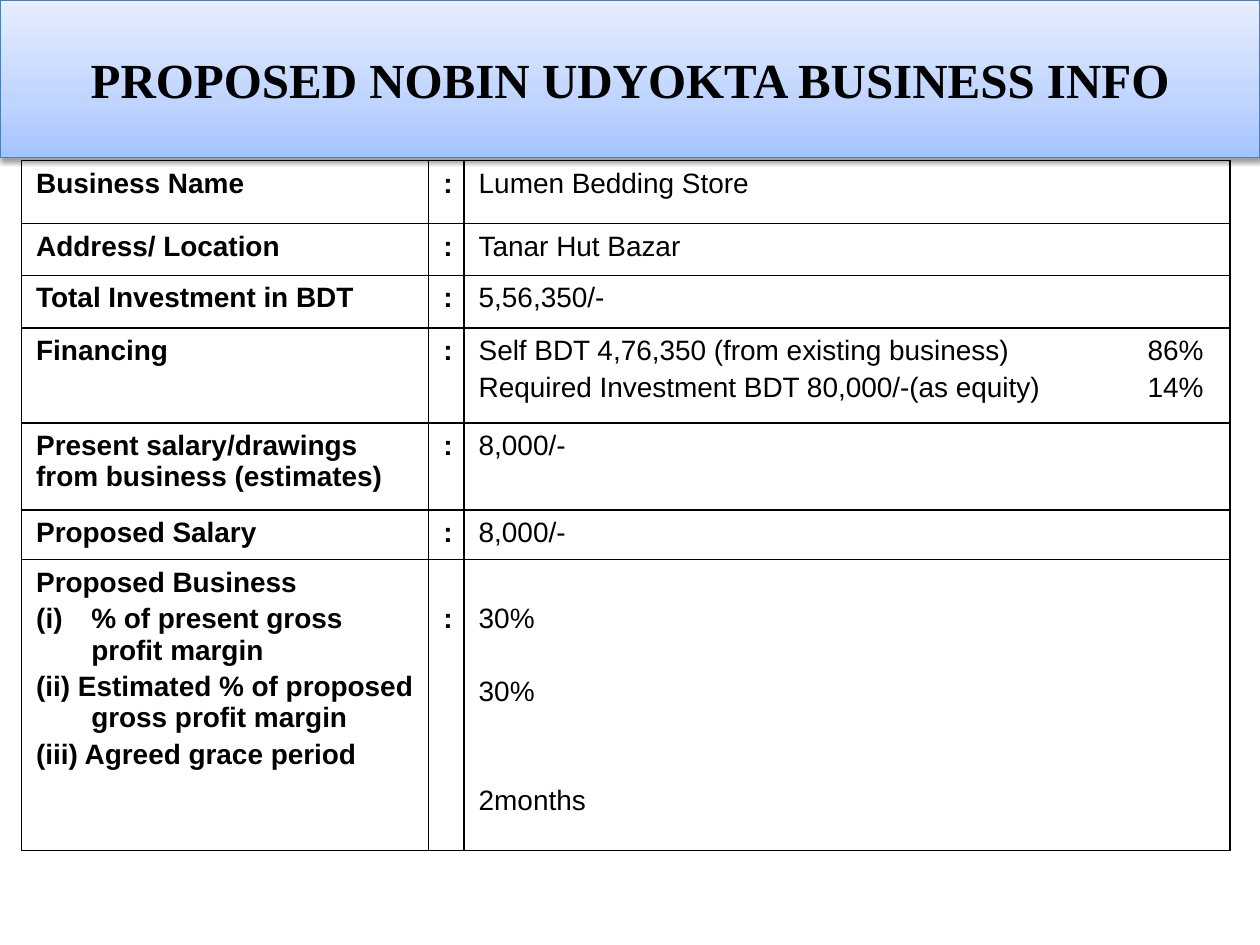
import copy

import lxml.etree
import pptx
import pptx.dml.color
import pptx.enum.shapes
import pptx.enum.text
import pptx.oxml.ns
import pptx.util

Cm = pptx.util.Cm
Pt = pptx.util.Pt
COLORS = {
    "text": "000000",
    "border": "000000",
    "shadow": "000000",
    "banner_line": "4B7EBC",
    "banner_bottom": "A4C4FF",
    "banner_middle": "BFD4FF",
    "banner_top": "E6EEFF",
}


def add_element(parent, tag, **attributes):
    return lxml.etree.SubElement(parent, pptx.oxml.ns.qn(tag), attributes)


def write(text_frame, text, size=16, font="Arial", bold=False, align=None,
          first=True, before=3.2, hanging=None, numbering=None, tab=None):
    paragraph = text_frame.paragraphs[0] if first else text_frame.add_paragraph()
    paragraph.alignment = align
    paragraph.space_before = Pt(0 if first else before)
    properties = paragraph._p.get_or_add_pPr()
    if hanging:
        properties.set("marL", str(hanging))
        properties.set("indent", str(-hanging))
    if numbering:
        add_element(properties, "a:buFont", typeface="+mj-lt")
        add_element(properties, "a:buAutoNum", type=numbering)
    if tab:
        tabs = add_element(properties, "a:tabLst")
        add_element(tabs, "a:tab", pos=str(tab), algn="r")
    run = paragraph.add_run()
    run.text = text
    run.font.size = Pt(size)
    run.font.name = font
    run.font.bold = bold
    run.font.color.rgb = pptx.dml.color.RGBColor.from_string(COLORS["text"])


presentation = pptx.Presentation()
presentation.slide_width = Cm(25.4)
presentation.slide_height = Cm(19.05)
slide = presentation.slides.add_slide(presentation.slide_layouts[6])

banner = slide.shapes.add_shape(
    pptx.enum.shapes.MSO_SHAPE.RECTANGLE, 0, 0, Cm(25.4), Cm(3.18))
banner.fill.gradient()
banner.fill.gradient_angle = 90
stop_list = banner._element.spPr.find(".//" + pptx.oxml.ns.qn("a:gsLst"))
stop_list.append(copy.deepcopy(stop_list[-1]))
banner_stops = [(0, "banner_bottom"), (0.35, "banner_middle"), (1, "banner_top")]
for stop, (position, color) in zip(banner.fill.gradient_stops, banner_stops):
    stop.position = position
    stop.color.rgb = pptx.dml.color.RGBColor.from_string(COLORS[color])
banner.line.color.rgb = pptx.dml.color.RGBColor.from_string(COLORS["banner_line"])
banner.line.width = Pt(0.75)
banner.shadow.inherit = False
effects = banner._element.spPr.find(pptx.oxml.ns.qn("a:effectLst"))
shadow = add_element(effects, "a:outerShdw", blurRad=str(Pt(3.1)), dist=str(Pt(1.6)),
                     dir="5400000", rotWithShape="0")
shadow_color = add_element(shadow, "a:srgbClr", val=COLORS["shadow"])
add_element(shadow_color, "a:alpha", val="38000")
banner.text_frame.word_wrap = True
banner.text_frame.vertical_anchor = pptx.enum.text.MSO_ANCHOR.MIDDLE
write(banner.text_frame, "PROPOSED NOBIN UDYOKTA BUSINESS INFO", size=28,
      font="Times New Roman", bold=True, align=pptx.enum.text.PP_ALIGN.CENTER)

hanging = Cm(1.11)
percent_tab = Cm(14.61)
rows = [
    (1.27, [("Business Name", {})], [("Lumen Bedding Store", {})]),
    (1.04, [("Address/ Location", {})], [("Tanar Hut Bazar", {})]),
    (1.06, [("Total Investment in BDT", {})], [("5,56,350/-", {})]),
    (1.92, [("Financing", {})], [
        ("Self BDT 4,76,350 (from existing business)\t86%", {"tab": percent_tab}),
        ("Required Investment BDT 80,000/-(as equity)\t14%", {"tab": percent_tab}),
    ]),
    (1.75, [("Present salary/drawings from business (estimates)", {})],
     [("8,000/-", {})]),
    (1, [("Proposed Salary", {})], [("8,000/-", {})]),
    (5.87, [
        ("Proposed Business", {}),
        ("% of present gross profit margin",
         {"hanging": hanging, "numbering": "romanLcParenBoth"}),
        ("(ii) Estimated % of proposed gross profit margin", {"hanging": hanging}),
        ("(iii) Agreed grace period", {"hanging": hanging}),
    ], [("30%", {}), ("30%", {"before": 24}), ("2months", {"before": 44.5})]),
]
column_widths = [8.21, 0.71, 15.45]

table_frame = slide.shapes.add_table(
    len(rows), len(column_widths), Cm(0.43), Cm(3.24),
    Cm(sum(column_widths)), Cm(sum(row[0] for row in rows)))
table = table_frame.table
table.first_row = False
table.horz_banding = False
for column, width in zip(table.columns, column_widths):
    column.width = Cm(width)

for row_index, (height, labels, values) in enumerate(rows):
    table.rows[row_index].height = Cm(height)
    for column_index, lines in enumerate([labels, [(":", {})], values]):
        cell = table.cell(row_index, column_index)
        below_heading = len(labels) > 1 and column_index > 0
        cell.margin_left = Cm(0.3)
        cell.margin_right = Cm(0.2)
        cell.margin_top = Cm(0.88 if below_heading else 0.15)
        cell.margin_bottom = Cm(0.15)
        for line_index, (text, options) in enumerate(lines):
            write(cell.text_frame, text, bold=column_index < 2,
                  first=line_index == 0, **options)
        cell_properties = cell._tc.get_or_add_tcPr()
        for side in ("a:lnL", "a:lnR", "a:lnT", "a:lnB"):
            border = add_element(cell_properties, side, w=str(Pt(1)))
            border_fill = add_element(border, "a:solidFill")
            add_element(border_fill, "a:srgbClr", val=COLORS["border"])
        cell.fill.background()

presentation.save("out.pptx")
